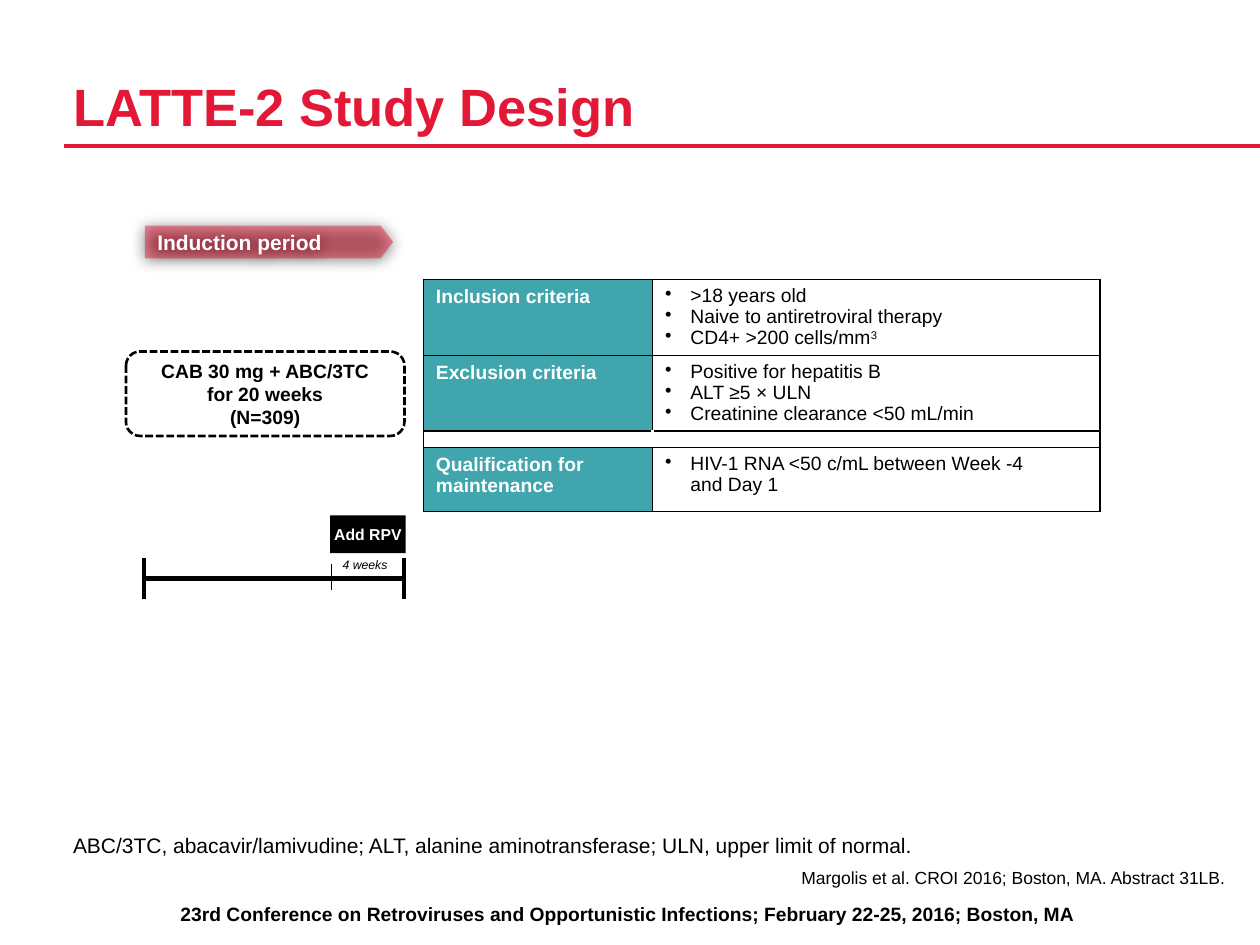
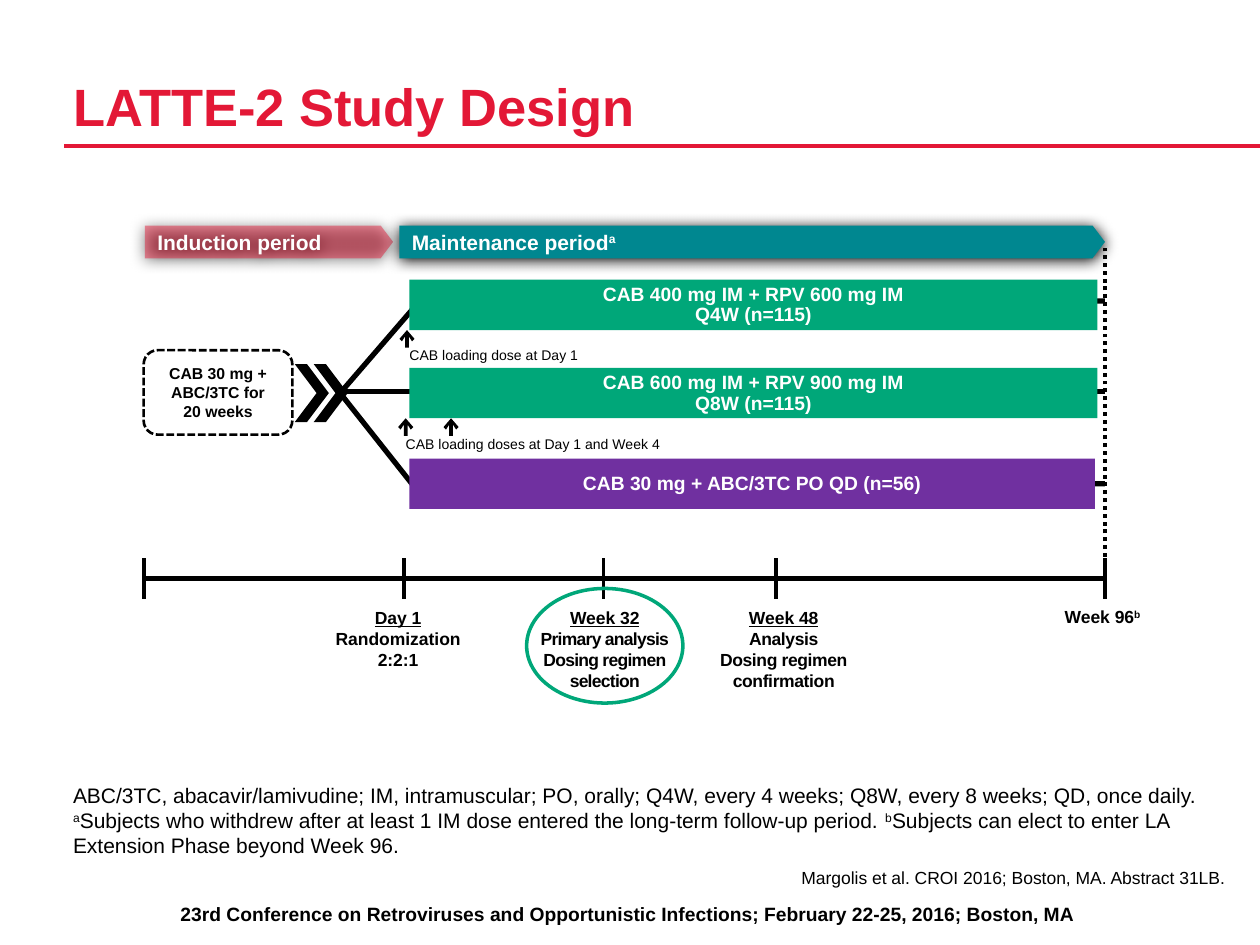
from lxml import etree
from pptx import Presentation
from pptx.dml.color import RGBColor
from pptx.enum.dml import MSO_LINE
from pptx.enum.shapes import MSO_CONNECTOR, MSO_SHAPE
from pptx.enum.text import MSO_ANCHOR, PP_ALIGN
from pptx.oxml.ns import qn
from pptx.util import Inches, Pt

LEFT, CENTER, RIGHT = PP_ALIGN.LEFT, PP_ALIGN.CENTER, PP_ALIGN.RIGHT
TOP, MIDDLE, BOTTOM = MSO_ANCHOR.TOP, MSO_ANCHOR.MIDDLE, MSO_ANCHOR.BOTTOM
RECTANGLE, ROUNDED = MSO_SHAPE.RECTANGLE, MSO_SHAPE.ROUNDED_RECTANGLE
PENTAGON, CHEVRON, OVAL = MSO_SHAPE.PENTAGON, MSO_SHAPE.CHEVRON, MSO_SHAPE.OVAL
STRAIGHT = MSO_CONNECTOR.STRAIGHT
DASHED, DOTTED = MSO_LINE.SQUARE_DOT, MSO_LINE.ROUND_DOT

FONT = "Arial"
BLACK, WHITE, RED = "000000", "FFFFFF", "E31836"
TEAL, PALE_TEAL, GREEN, PURPLE = "008790", "40A5AC", "00A779", "7030A0"

AXIS_Y, AXIS_START, DAY_1, WEEK_32, WEEK_48, WEEK_96 = 4.59, 1.14, 3.21, 4.79, 6.16, 8.77
CRITERIA = [
    ("Inclusion criteria",
     ">18 years old\nNaive to antiretroviral therapy\nCD4+ >200 cells/mm^3^"),
    ("Exclusion criteria",
     "Positive for hepatitis B\nALT ≥5 × ULN\nCreatinine clearance <50 mL/min"),
    ("", ""),
    ("Qualification for maintenance",
     "HIV-1 RNA <50 c/mL between Week -4\vand Day 1"),
]
ROW_HEIGHTS = [0.6, 0.6, 0.13, 0.51]
COLUMN_WIDTHS = [1.82, 3.55]
ARROW_OUTLINE = [(0.06, 0.07), (0.04, 0.09), (0.015, 0.05), (0.015, 0.14),
                 (-0.015, 0.14), (-0.015, 0.05), (-0.04, 0.09), (-0.06, 0.07)]


def color(hex_code):
    """Turn a hex string into a colour."""
    return RGBColor.from_string(hex_code)


def paint_line(line, line_color, width, dash=None):
    """Set the colour, width and dash of a line."""
    line.color.rgb = color(line_color)
    line.width = Pt(width)
    if dash:
        line.dash_style = dash


def add_bullet(paragraph):
    """Give a paragraph a hanging round bullet."""
    properties = paragraph._p.get_or_add_pPr()
    properties.set("marL", str(Inches(0.2)))
    properties.set("indent", str(-Inches(0.2)))
    etree.SubElement(properties, qn("a:buChar"), char="•")


def write_text(frame, text, size=11, text_color=BLACK, bold=False, italic=False,
               align=LEFT, spacing=None, bullet=False, underline_first=False, tracking=0):
    """Write one paragraph per line; carets enclose superscripts."""
    for index, content in enumerate(text.split("\n")):
        paragraph = frame.add_paragraph() if index else frame.paragraphs[0]
        paragraph.alignment = align
        if spacing:
            paragraph.line_spacing = Pt(spacing)
        if bullet:
            add_bullet(paragraph)
        for part_index, part in enumerate(content.split("^")):
            for line_index, line in enumerate(part.split("\v")):
                if line_index:
                    paragraph.add_line_break()
                if not line:
                    continue
                run = paragraph.add_run()
                run.text = line
                run.font.name = FONT
                run.font.size = Pt(size)
                run.font.bold = bold
                run.font.italic = italic
                run.font.color.rgb = color(text_color)
                underlined = underline_first and index == 0
                if underlined:
                    run.font.underline = True
                elif tracking:
                    run._r.get_or_add_rPr().set("spc", str(tracking))
                if part_index % 2:
                    run._r.get_or_add_rPr().set("baseline", "30000")


def prepare_frame(frame, anchor, inset=0):
    """Set wrapping, anchor and side margins of a text frame."""
    frame.word_wrap = True
    frame.vertical_anchor = anchor
    frame.margin_left = frame.margin_right = Inches(inset)
    frame.margin_top = frame.margin_bottom = 0


def add_text(slide, box, text, anchor=TOP, **text_format):
    """Add a text box without margins."""
    frame = slide.shapes.add_textbox(*map(Inches, box)).text_frame
    prepare_frame(frame, anchor)
    write_text(frame, text, **text_format)


def add_shape(slide, kind, box, fill=None, outline=None, adjustment=None,
              text="", inset=0, **text_format):
    """Add a preset shape; outline holds colour, width and dash."""
    shape = slide.shapes.add_shape(kind, *map(Inches, box))
    shape.shadow.inherit = False
    if adjustment is not None:
        shape.adjustments[0] = adjustment
    if fill:
        shape.fill.solid()
        shape.fill.fore_color.rgb = color(fill)
    else:
        shape.fill.background()
    if outline:
        paint_line(shape.line, *outline)
    else:
        shape.line.fill.background()
    if text:
        prepare_frame(shape.text_frame, MIDDLE, inset)
        write_text(shape.text_frame, text, **text_format)
    return shape


def add_line(slide, start, end, line_color=BLACK, width=3, dash=None):
    """Add a straight line between two points."""
    connector = slide.shapes.add_connector(STRAIGHT, *map(Inches, start + end))
    paint_line(connector.line, line_color, width, dash)
    etree.SubElement(connector._element.spPr, qn("a:effectLst"))


def add_outline(slide, points, closed):
    """Add a filled closed outline or an open polyline."""
    first, *others = [tuple(map(Inches, point)) for point in points]
    builder = slide.shapes.build_freeform(*first)
    builder.add_line_segments(others, close=closed)
    shape = builder.convert_to_shape()
    shape.shadow.inherit = False
    if closed:
        shape.fill.solid()
        shape.fill.fore_color.rgb = color(BLACK)
        shape.line.fill.background()
    else:
        shape.fill.background()
        paint_line(shape.line, BLACK, 3)


def add_dose_arrow(slide, x, y):
    """Add a small upward arrow with its tip at a point."""
    points = [(x, y)] + [(x + dx, y + dy) for dx, dy in ARROW_OUTLINE]
    add_outline(slide, points, True)


def add_period(slide, left, width, fill, text, opacity=100):
    """Add a period banner with a soft shadow."""
    banner = add_shape(slide, PENTAGON, (left, 1.79, width, 0.26), fill=fill, adjustment=0.38,
                       text=text, inset=0.1, size=12, text_color=WHITE, bold=True)
    properties = banner._element.spPr
    if opacity < 100:
        fill_color = properties.find(qn("a:solidFill"))[0]
        etree.SubElement(fill_color, qn("a:alpha"), val=str(opacity * 1000))
    shadow = etree.SubElement(properties.find(qn("a:effectLst")), qn("a:outerShdw"),
                              blurRad=str(Pt(8.5)), dist=str(Pt(1)), dir="5400000",
                              algn="ctr", rotWithShape="0")
    etree.SubElement(shadow, qn("a:srgbClr"), val=BLACK)


def add_regimen_box(slide, box, text, size):
    """Add the dashed box of the induction regimen."""
    add_shape(slide, ROUNDED, box, outline=(BLACK, 1.5, DASHED),
              text=text, size=size, bold=True, align=CENTER)


def add_timeline(slide, end, ticks):
    """Add the time axis with its tick marks."""
    add_line(slide, (AXIS_START, AXIS_Y), (end, AXIS_Y))
    for x in ticks:
        add_line(slide, (x, AXIS_Y - 0.16), (x, AXIS_Y + 0.16), width=2.25)


def set_borders(cell, white_side):
    """Draw thin black cell borders, with one side white if named."""
    properties = cell._tc.get_or_add_tcPr()
    for side in "LRTB":
        border_color, width = (WHITE, 1.5) if side == white_side else (BLACK, 1)
        border = etree.SubElement(properties, qn(f"a:ln{side}"), w=str(Pt(width)))
        fill = etree.SubElement(border, qn("a:solidFill"))
        etree.SubElement(fill, qn("a:srgbClr"), val=border_color)


def fill_cell(cell, text, is_label):
    """Format one criteria cell; an empty one becomes a narrow spacer."""
    set_borders(cell, None if text else "R" if is_label else "L")
    cell.fill.solid()
    cell.fill.fore_color.rgb = color(PALE_TEAL if is_label and text else WHITE)
    if not text:
        cell.margin_top = cell.margin_bottom = 0
        paragraph = cell.text_frame.paragraphs[0]
        etree.SubElement(paragraph._p, qn("a:endParaRPr"), sz="500")
    elif is_label:
        write_text(cell.text_frame, text, text_color=WHITE, bold=True)
    else:
        write_text(cell.text_frame, text, spacing=12, bullet=True)


def add_criteria_table(slide):
    """Add the table of study criteria."""
    box = (3.36, 2.22, sum(COLUMN_WIDTHS), sum(ROW_HEIGHTS))
    table = slide.shapes.add_table(len(CRITERIA), 2, *map(Inches, box)).table
    table.first_row = table.horz_banding = False
    for column, width in zip(table.columns, COLUMN_WIDTHS):
        column.width = Inches(width)
    for row, height, texts in zip(table.rows, ROW_HEIGHTS, CRITERIA):
        row.height = Inches(height)
        for index, text in enumerate(texts):
            fill_cell(row.cells[index], text, index == 0)


def add_study_slide(presentation, abbreviations):
    """Add a slide with the shared title, rule, notes and induction banner."""
    slide = presentation.slides.add_slide(presentation.slide_layouts[6])
    add_line(slide, (0.51, 1.16), (10, 1.16), RED, 2)
    add_text(slide, (0.58, 0.17, 8.25, 0.92), "LATTE-2 Study Design", anchor=BOTTOM,
             size=30, text_color=RED, bold=True, spacing=35)
    add_text(slide, (0.58, 6.11, 9.14, 0.7), abbreviations, anchor=BOTTOM, size=12)
    add_text(slide, (0.58, 6.88, 9.14, 0.2),
             "Margolis et al. CROI 2016; Boston, MA. Abstract 31LB.", size=10, align=RIGHT)
    add_text(slide, (0.06, 7.11, 9.85, 0.29),
             "23rd Conference on Retroviruses and Opportunistic Infections; "
             "February 22-25, 2016; Boston, MA", anchor=MIDDLE, bold=True, align=CENTER)
    add_period(slide, 1.15, 1.97, RED, "Induction period", opacity=47)
    return slide


def build_induction_slide(presentation):
    """Build the slide on the induction period and the criteria."""
    slide = add_study_slide(
        presentation, "ABC/3TC, abacavir/lamivudine; ALT, alanine aminotransferase; "
        "ULN, upper limit of normal.")
    add_criteria_table(slide)
    add_timeline(slide, DAY_1, [AXIS_START, DAY_1])
    add_regimen_box(slide, (1, 2.79, 2.21, 0.67),
                    "CAB 30 mg + ABC/3TC\nfor 20 weeks\n(N=309)", 11)
    add_shape(slide, RECTANGLE, (2.62, 4.09, 0.6, 0.3), fill=BLACK, text="Add RPV",
              size=9, text_color=WHITE, bold=True, align=CENTER)
    add_line(slide, (2.63, 4.48), (2.63, 4.68), width=0.75)
    add_text(slide, (2.72, 4.42, 0.45, 0.12), "4 weeks", size=7, italic=True)


def build_maintenance_slide(presentation):
    """Build the slide on the maintenance arms and the time points."""
    slide = add_study_slide(
        presentation, "ABC/3TC, abacavir/lamivudine; IM, intramuscular; PO, orally; "
        "Q4W, every 4 weeks; Q8W, every 8 weeks; QD, once daily. ^a^Subjects who withdrew "
        "after at least 1 IM dose entered the long-term follow-up period. ^b^Subjects can "
        "elect to enter LA Extension Phase beyond Week 96.")
    add_period(slide, 3.17, 5.6, TEAL, "Maintenance period^a^")
    add_line(slide, (2.72, 3.11), (WEEK_96, 3.11))
    for elbow_x, y in [(3.33, 2.39), (3.27, 3.84)]:
        add_outline(slide, [(2.7, 3.12), (elbow_x, y), (WEEK_96, y)], False)
    for top, width, fill, text in [
        (2.22, 5.46, GREEN, "CAB 400 mg IM + RPV 600 mg IM\nQ4W (n=115)"),
        (2.92, 5.46, GREEN, "CAB 600 mg IM + RPV 900 mg IM\nQ8W (n=115)"),
        (3.64, 5.44, PURPLE, "CAB 30 mg + ABC/3TC PO QD (n=56)"),
    ]:
        add_shape(slide, RECTANGLE, (3.25, top, width, 0.4), fill=fill, text=text,
                  text_color=WHITE, bold=True, align=CENTER, spacing=12)
    add_timeline(slide, WEEK_96, [AXIS_START, DAY_1, WEEK_32, WEEK_48, WEEK_96])
    add_line(slide, (WEEK_96, 4.42), (WEEK_96, 1.97), width=2.25, dash=DOTTED)
    for left in (2.34, 2.49):
        add_shape(slide, CHEVRON, (left, 2.89, 0.27, 0.46), fill=BLACK, adjustment=0.64)
    add_regimen_box(slide, (1.14, 2.78, 1.18, 0.67), "CAB 30 mg +\nABC/3TC for\n20 weeks", 9)
    for x, y in [(3.23, 2.62), (3.22, 3.32), (3.58, 3.32)]:
        add_dose_arrow(slide, x, y)
    add_text(slide, (3.25, 2.75, 1.6, 0.14), "CAB loading dose at Day 1", size=8)
    add_text(slide, (3.22, 3.46, 2.3, 0.14), "CAB loading doses at Day 1 and Week 4", size=8)
    add_shape(slide, OVAL, (4.18, 4.67, 1.24, 0.91), outline=(GREEN, 2))
    for center, text, tracking in [
        (3.16, "Day 1\nRandomization\n2:2:1", 0),
        (4.8, "Week 32\nPrimary analysis\nDosing regimen\nselection", -40),
        (6.22, "Week 48\nAnalysis\nDosing regimen\nconfirmation", -20),
    ]:
        add_text(slide, (center - 0.7, 4.82, 1.4, 0.67), text, size=10, bold=True,
                 align=CENTER, underline_first=True, tracking=tracking)
    add_text(slide, (8.06, 4.81, 1.38, 0.17), "Week 96^b^", size=10, bold=True, align=CENTER)


def main():
    """Build and save the presentation."""
    presentation = Presentation()
    presentation.slide_width, presentation.slide_height = Inches(10), Inches(7.5)
    build_induction_slide(presentation)
    build_maintenance_slide(presentation)
    presentation.save("out.pptx")


if __name__ == "__main__":
    main()
